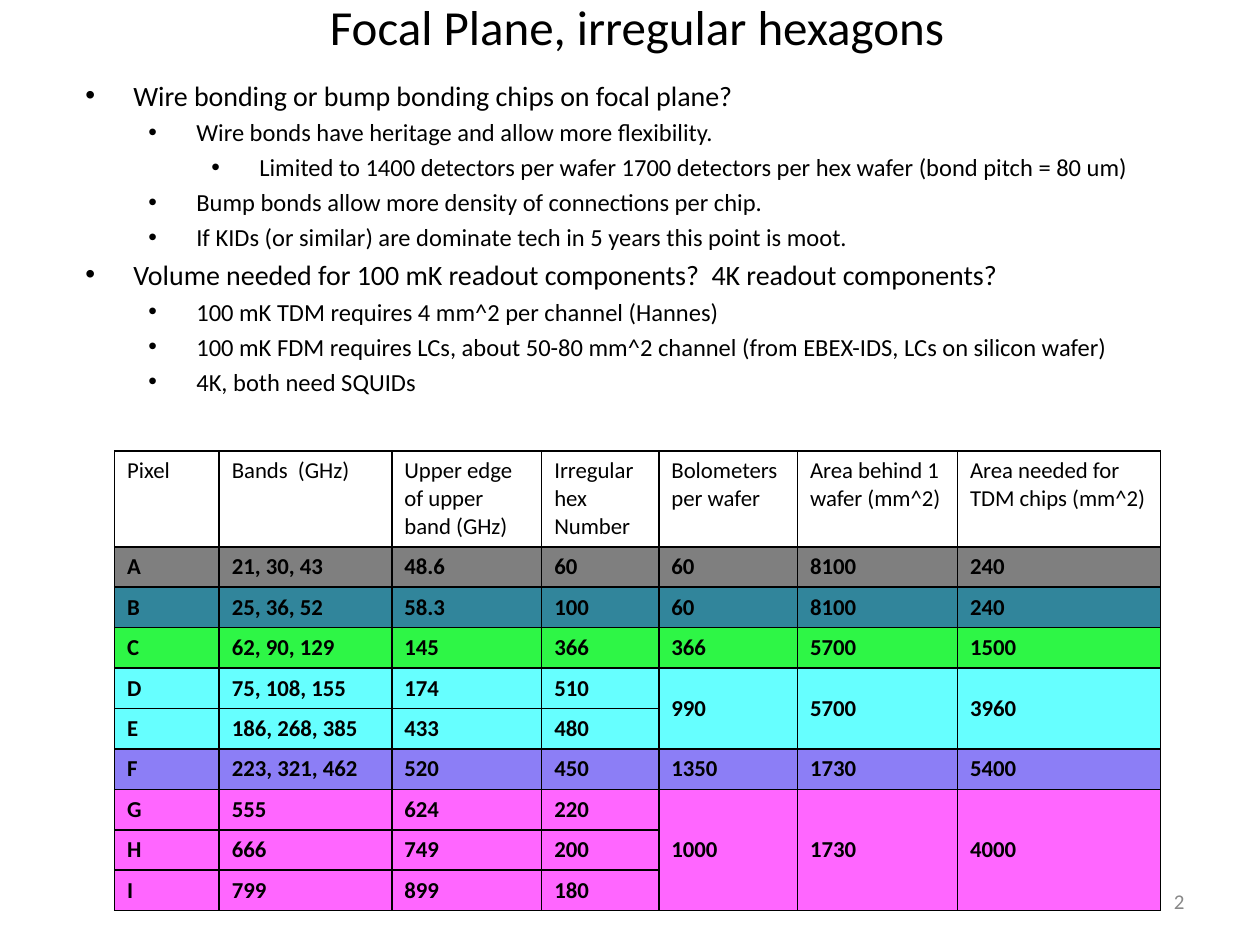
from collections import namedtuple
from dataclasses import dataclass

from lxml.etree import SubElement
from pptx import Presentation
from pptx.dml.color import RGBColor
from pptx.enum.text import MSO_ANCHOR, PP_ALIGN
from pptx.oxml.ns import qn
from pptx.util import Inches, Pt

Box = namedtuple("Box", "left top width height")


@dataclass(frozen=True)
class Theme:
    font: str = "Calibri"
    ink: str = "000000"
    muted: str = "888888"
    gray: str = "7F7F7F"
    teal: str = "31859B"
    green: str = "2EF646"
    cyan: str = "66FFFF"
    violet: str = "8C7EF6"
    pink: str = "FF66FF"
    title_size: float = 28
    topic_size: float = 16
    detail_size: float = 14
    table_size: float = 13
    number_size: float = 12
    bullet_gap: float = 3.2
    border_width: float = 1


THEME = Theme()

BULLETS = [
    (0, "Wire bonding or bump bonding chips on focal plane?"),
    (1, "Wire bonds have heritage and allow more flexibility."),
    (2, "Limited to 1400 detectors per wafer 1700 detectors per hex wafer (bond pitch = 80 um)"),
    (1, "Bump bonds allow more density of connections per chip."),
    (1, "If KIDs (or similar) are dominate tech in 5 years this point is moot."),
    (0, "Volume needed for 100 mK readout components?  4K readout components?"),
    (1, "100 mK TDM requires 4 mm^2 per channel (Hannes)"),
    (1, "100 mK FDM requires LCs, about 50-80 mm^2 channel (from EBEX-IDS, LCs on silicon wafer)"),
    (1, "4K, both need SQUIDs"),
]

HEADINGS = [
    "Pixel", "Bands  (GHz)", "Upper edge of upper band (GHz)", "Irregular hex Number",
    "Bolometers per wafer", "Area behind 1 wafer (mm^2)", "Area needed for TDM chips (mm^2)",
]
COLUMN_WIDTHS = [0.83, 1.37, 1.19, 0.93, 1.1, 1.27, 1.61]
HEADING_HEIGHT = 0.76
SHARED_COLUMN = 4

PIXEL_GROUPS = [
    (THEME.gray, 20, [("A", "21, 30, 43", "48.6", "60")], ("60", "8100", "240")),
    (THEME.teal, 100, [("B", "25, 36, 52", "58.3", "100")], ("60", "8100", "240")),
    (THEME.green, 100, [("C", "62, 90, 129", "145", "366")], ("366", "5700", "1500")),
    (THEME.cyan, 100, [("D", "75, 108, 155", "174", "510"),
                       ("E", "186, 268, 385", "433", "480")], ("990", "5700", "3960")),
    (THEME.violet, 100, [("F", "223, 321, 462", "520", "450")], ("1350", "1730", "5400")),
    (THEME.pink, 100, [("G", "555", "624", "220"),
                       ("H", "666", "749", "200"),
                       ("I", "799", "899", "180")], ("1000", "1730", "4000")),
]


def inches(box):
    return [Inches(length) for length in box]


def write(para, text, size, color=THEME.ink, bold=False, align=PP_ALIGN.LEFT):
    para.alignment = align
    span = para.add_run()
    span.text = text
    span.font.name = THEME.font
    span.font.size = Pt(size)
    span.font.bold = bold
    span.font.color.rgb = RGBColor.from_string(color)


def add_frame(page, box):
    frame = page.shapes.add_textbox(*inches(box)).text_frame
    frame.word_wrap = True
    return frame


def place_title(page, box):
    title = page.shapes.title
    title.left, title.top, title.width, title.height = inches(box)
    title.text_frame.vertical_anchor = MSO_ANCHOR.MIDDLE
    write(title.text_frame.paragraphs[0], "Focal Plane, irregular hexagons",
          THEME.title_size, align=PP_ALIGN.CENTER)


def set_bullet(para, level):
    para.level = level
    properties = para._p.get_or_add_pPr()
    properties.set("marL", str(Inches(0.88 + 0.5 * level)))
    properties.set("indent", str(Inches(-0.38)))
    color = SubElement(properties, qn("a:buClr"))
    SubElement(color, qn("a:srgbClr"), val=THEME.ink)
    SubElement(properties, qn("a:buFont"), typeface="Arial")
    SubElement(properties, qn("a:buChar"), char="•")


def place_bullets(page, box):
    frame = add_frame(page, box)
    for index, (level, text) in enumerate(BULLETS):
        para = frame.add_paragraph() if index else frame.paragraphs[0]
        set_bullet(para, level)
        para.space_before = Pt(THEME.bullet_gap if index else 0)
        write(para, text, THEME.detail_size if level else THEME.topic_size)


def set_borders(cell):
    properties = cell._tc.get_or_add_tcPr()
    for side in ("lnL", "lnR", "lnT", "lnB"):
        line = SubElement(properties, qn(f"a:{side}"), w=str(Pt(THEME.border_width)))
        fill = SubElement(line, qn("a:solidFill"))
        SubElement(fill, qn("a:srgbClr"), val=THEME.ink)


def paint(cell, color, opacity):
    cell.fill.solid()
    cell.fill.fore_color.rgb = RGBColor.from_string(color)
    if opacity < 100:
        tint = cell._tc.tcPr.find(".//" + qn("a:srgbClr"))
        SubElement(tint, qn("a:alpha"), val=str(opacity * 1000))


def fill_group(table, top, color, opacity, pixels, shared):
    bottom = top + len(pixels) - 1
    for row, values in enumerate(pixels, top):
        for cell in table.rows[row].cells:
            paint(cell, color, opacity)
        for column, text in enumerate(values):
            write(table.cell(row, column).text_frame.paragraphs[0], text,
                  THEME.table_size, bold=True)
    for column, text in enumerate(shared, SHARED_COLUMN):
        cell = table.cell(top, column)
        if bottom > top:
            cell.merge(table.cell(bottom, column))
            cell.vertical_anchor = MSO_ANCHOR.MIDDLE
        write(cell.text_frame.paragraphs[0], text, THEME.table_size, bold=True)
    return bottom + 1


def place_pixel_table(page, box):
    row_count = 1 + sum(len(pixels) for _, _, pixels, _ in PIXEL_GROUPS)
    table = page.shapes.add_table(row_count, len(HEADINGS), *inches(box)).table
    table.first_row = False
    table.horz_banding = False
    for column, width in zip(table.columns, COLUMN_WIDTHS):
        column.width = Inches(width)
    row_height = (box.height - HEADING_HEIGHT) / (row_count - 1)
    for index, row in enumerate(table.rows):
        row.height = Inches(row_height if index else HEADING_HEIGHT)
    for cell in table.iter_cells():
        set_borders(cell)
    for cell, text in zip(table.rows[0].cells, HEADINGS):
        cell.fill.background()
        write(cell.text_frame.paragraphs[0], text, THEME.table_size)
    top = 1
    for group in PIXEL_GROUPS:
        top = fill_group(table, top, *group)


def place_page_number(page, box):
    frame = add_frame(page, box)
    frame.vertical_anchor = MSO_ANCHOR.MIDDLE
    write(frame.paragraphs[0], "2", THEME.number_size, THEME.muted, align=PP_ALIGN.RIGHT)


def main():
    deck = Presentation()
    deck.slide_width, deck.slide_height = Inches(10), Inches(7.5)
    page = deck.slides.add_slide(deck.slide_layouts.get_by_name("Title Only"))
    place_page_number(page, Box(7.17, 6.95, 2.33, 0.4))
    place_pixel_table(page, Box(0.91, 3.58, 8.3, 3.65))
    place_title(page, Box(1.58, -0.08, 6.95, 0.57))
    place_bullets(page, Box(0.08, 0.57, 9.25, 3.02))
    deck.save("out.pptx")


if __name__ == "__main__":
    main()
